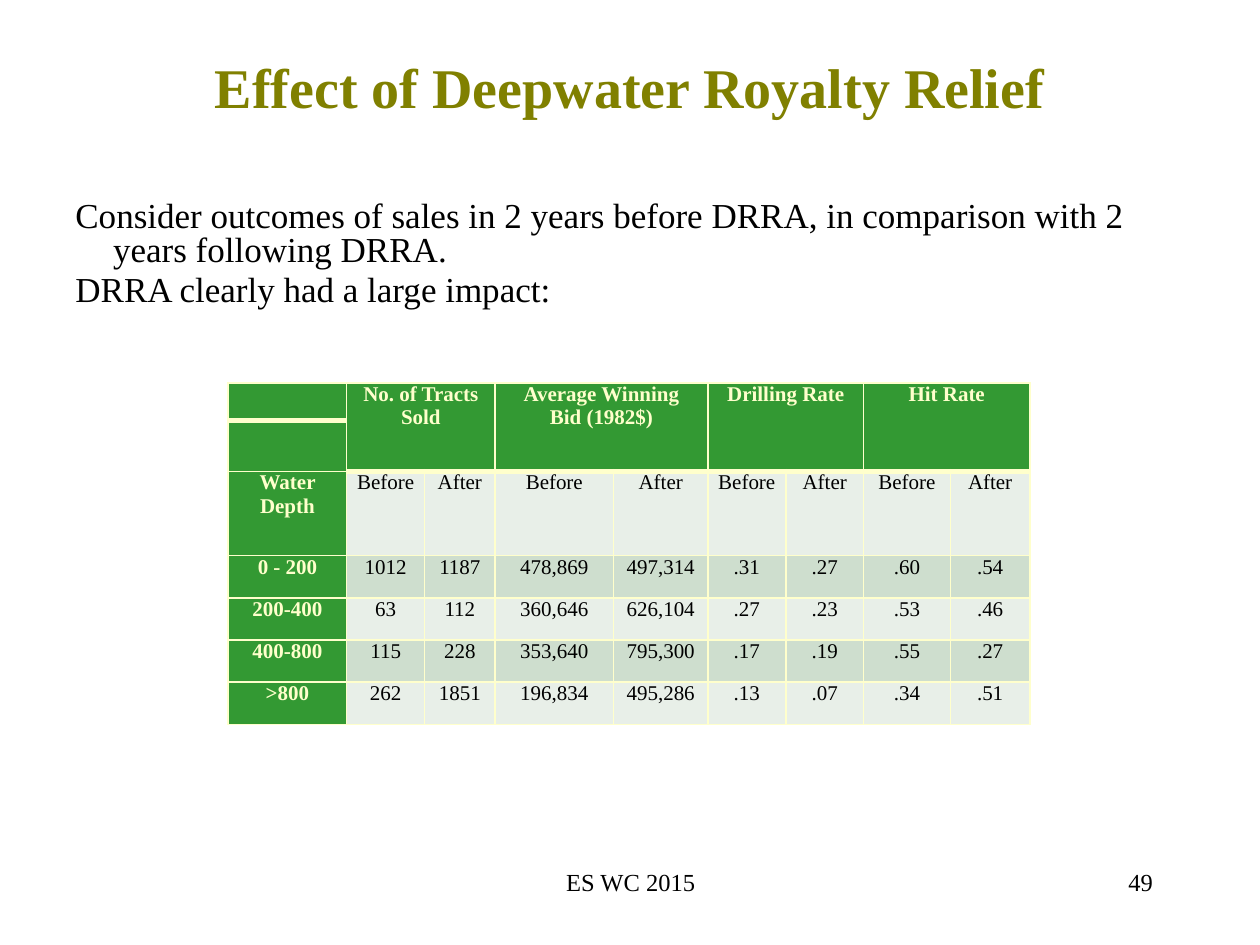
from lxml import etree
from pptx import Presentation
from pptx import util as u
from pptx.dml import color
from pptx.enum import text
from pptx.oxml import ns

CREAM, GREEN, BLACK = "FFFFCC", "339933", "000000"
CENTER = text.PP_ALIGN.CENTER


def rgb(value):
    return color.RGBColor.from_string(value)


def write(frame, lines, size, ink, align, bold=False):
    frame.word_wrap = True
    for index, line in enumerate(lines):
        para = frame.add_paragraph() if index else frame.paragraphs[0]
        para.alignment = align
        span = para.add_run()
        span.text = line
        span.font.name = "Times New Roman"
        span.font.size = u.Pt(size)
        span.font.bold = bold
        span.font.color.rgb = rgb(ink)


deck = Presentation()
deck.slide_width, deck.slide_height = u.Cm(25.4), u.Cm(19.05)
page = deck.slides.add_slide(deck.slide_layouts[6])

body_lines = [
    "Consider outcomes of sales in 2 years before DRRA, in comparison with 2 years following DRRA.",
    "DRRA clearly had a large impact:",
]
boxes = [
    (1.27, 0.76, 22.86, 1.96, ["Effect of Deepwater Royalty Relief"], 32, "808000", CENTER, True),
    (1.27, 3.94, 22.86, 13.08, body_lines, 20, BLACK, text.PP_ALIGN.LEFT, False),
    (18.21, 17.35, 5.28, 1.27, ["49"], 14, BLACK, text.PP_ALIGN.RIGHT, False),
    (8.69, 17.35, 8.05, 1.27, ["ES WC 2015"], 14, BLACK, CENTER, False),
]
frames = []
for left, top, width, height, *content in boxes:
    box = page.shapes.add_textbox(u.Cm(left), u.Cm(top), u.Cm(width), u.Cm(height))
    write(box.text_frame, *content)
    frames.append(box.text_frame)

title, body = frames[:2]
title.vertical_anchor = text.MSO_ANCHOR.MIDDLE
for para in body.paragraphs:
    para.line_spacing = 0.8
    para.space_before = u.Pt(4)
    properties = para._p.get_or_add_pPr()
    properties.set("marL", str(u.Cm(0.76)))
    properties.set("indent", str(u.Cm(-0.76)))

widths = [2.39, 1.57, 1.42, 2.39, 1.9, 1.57, 1.57, 1.75, 1.6]
heights = [0.64, 0.94, 1.7] + [0.85] * 4
groups = [["No. of Tracts", "Sold"], ["Average Winning", "Bid (1982$)"], ["Drilling Rate"], ["Hit Rate"]]
header = [[""]]
for group in groups:
    header += [group, [""]]
values = [
    ["Water Depth"] + ["Before", "After"] * 4,
    ["0 - 200", "1012", "1187", "478,869", "497,314", ".31", ".27", ".60", ".54"],
    ["200-400", "63", "112", "360,646", "626,104", ".27", ".23", ".53", ".46"],
    ["400-800", "115", "228", "353,640", "795,300", ".17", ".19", ".55", ".27"],
    [">800", "262", "1851", "196,834", "495,286", ".13", ".07", ".34", ".51"],
]
rows = [header, [[""]] * len(widths)] + [[[value] for value in row] for row in values]

table = page.shapes.add_table(
    len(heights), len(widths), u.Cm(4.6), u.Cm(7.72), u.Cm(sum(widths)), u.Cm(sum(heights))
).table
table.first_row = table.horz_banding = False
for column, width in zip(table.columns, widths):
    column.width = u.Cm(width)
for row, height in zip(table.rows, heights):
    row.height = u.Cm(height)
for first in range(1, len(widths), 2):
    table.cell(0, first).merge(table.cell(1, first + 1))

for r, row in enumerate(rows):
    for c, lines in enumerate(row):
        cell = table.cell(r, c)
        heading = r < 2 or c == 0
        cell.margin_left = cell.margin_right = u.Cm(0.18)
        cell.margin_top = cell.margin_bottom = 0
        if not cell.is_spanned:
            write(cell.text_frame, lines, 12, CREAM if heading else BLACK, CENTER, heading)
        thick_sides = {(0, True): "B", (1, True): "T", (0, False): "B", (1, False): "B", (2, False): "T"}
        for side in "LRTB":
            points = 3 if thick_sides.get((r, c == 0)) == side else 1
            line = etree.SubElement(cell._tc.get_or_add_tcPr(), ns.qn("a:ln" + side), w=str(u.Pt(points)))
            fill = etree.SubElement(line, ns.qn("a:solidFill"))
            etree.SubElement(fill, ns.qn("a:srgbClr"), val=CREAM)
        cell.fill.solid()
        cell.fill.fore_color.rgb = rgb(GREEN if heading else ("E8EFE8", "CEDECE")[r % 2])

deck.save("out.pptx")
